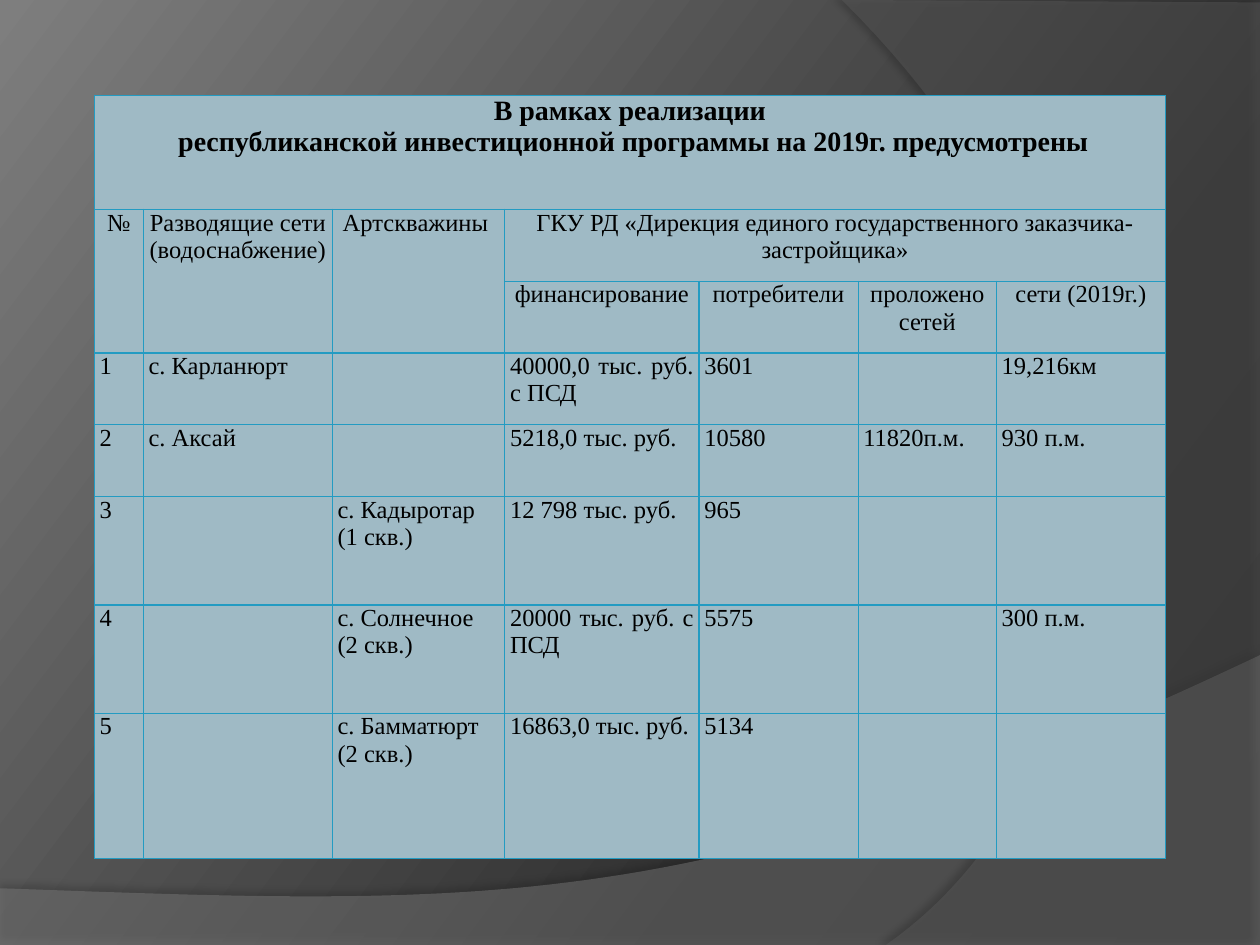
from dataclasses import dataclass

from lxml.etree import SubElement
from pptx import Presentation
from pptx.dml.color import RGBColor
from pptx.enum.text import PP_ALIGN as Align
from pptx.oxml import parse_xml
from pptx.oxml.ns import nsdecls, qn
from pptx.util import Pt

BLACK = RGBColor(0x00, 0x00, 0x00)
CELL = RGBColor(0x9F, 0xBA, 0xC5)
EDGE = RGBColor(0x23, 0x9B, 0xC2)
LOW = RGBColor(0x7F, 0x7F, 0x7F)
SIDE = RGBColor(0x5E, 0x5E, 0x5E)
STOPS = (
    (0, RGBColor(0x28, 0x28, 0x28)),
    (30, RGBColor(0x2F, 0x2F, 0x2F)),
    (100, RGBColor(0x7E, 0x7E, 0x7E)),
)
FONT = "Times New Roman"
Point = tuple[float, float]


@dataclass
class Wave:
    curve: tuple[Point, Point, Point, Point]
    corners: list[Point]
    color: RGBColor
    alpha: int
    shade: int
    gap: float
    angle: int


@dataclass
class Span:
    row: int
    col: int
    rows: int
    cols: int


WAVES = [
    Wave(((720, 374.4), (402.5, 524.9), (281.5, 517.7), (0, 507.6)),
         [(0, 540), (720, 540)], LOW, 45, 35, 3.5, 270),
    Wave(((506.2, 540), (641.5, 445.7), (681.8, 198), (481, 0)),
         [(720, 1.4), (720, 540)], SIDE, 40, 45, 4, 180),
]
COLS = [27.9, 108, 98.6, 111, 90.9, 79.1, 96.5]
ROWS = [64.9, 41.1, 41.1, 41.1, 41.1, 61.8, 61.8, 83]
SPANS = [Span(0, 0, 1, 7), Span(1, 3, 1, 4)] + [Span(1, col, 2, 1) for col in range(3)]
TEXT = [
    ["В рамках реализации\n республиканской инвестиционной программы на 2019г. предусмотрены"],
    ["№", "Разводящие сети (водоснабжение)", "Артскважины ",
     "ГКУ РД «Дирекция единого государственного заказчика-застройщика»"],
    ["", "", "", "финансирование", "потребители", "проложено сетей", "сети (2019г.)"],
    ["1", "с. Карланюрт", "", "40000,0 тыс. руб. с ПСД", "3601", "", "19,216км"],
    ["2", "с. Аксай", "", "5218,0 тыс. руб.", "10580", "11820п.м.", "930 п.м."],
    ["3", "", "с. Кадыротар\n(1 скв.)", "12 798 тыс. руб.", "965"],
    ["4", "", "с. Солнечное\n(2 скв.)", "20000 тыс. руб. с ПСД", "5575", "", "300 п.м."],
    ["5", "", "с. Бамматюрт\n(2 скв.)", "16863,0 тыс. руб.", "5134"],
]


def paint_back(slide) -> None:
    fill = slide.background.fill
    fill.gradient()
    fill.gradient_angle = 143
    stops = slide._element.find(".//" + qn("a:gsLst"))
    for stop in list(stops):
        stops.remove(stop)
    for place, color in STOPS:
        stop = SubElement(stops, qn("a:gs"), pos=str(place * 1000))
        SubElement(stop, qn("a:srgbClr"), val=str(color))


def trace(curve: tuple[Point, ...], steps: int = 60) -> list[Point]:
    points = []
    for step in range(steps + 1):
        t = step / steps
        u = 1 - t
        parts = (u ** 3, 3 * u * u * t, 3 * u * t * t, t ** 3)
        points.append(tuple(sum(k * p[axis] for k, p in zip(parts, curve)) for axis in (0, 1)))
    return points


def draw_wave(slide, wave: Wave) -> None:
    first, *rest = trace(wave.curve) + wave.corners
    pen = slide.shapes.build_freeform(round(first[0] * 100), round(first[1] * 100), scale=Pt(1) / 100)
    pen.add_line_segments([(round(x * 100), round(y * 100)) for x, y in rest], close=True)
    shape = pen.convert_to_shape()
    shape.fill.solid()
    shape.fill.fore_color.rgb = wave.color
    shape.line.fill.background()
    shape.shadow.inherit = False
    props = shape._element.spPr
    tint = props.find(qn("a:solidFill") + "/" + qn("a:srgbClr"))
    SubElement(tint, qn("a:alpha"), val=str(wave.alpha * 1000))
    shadow = SubElement(
        props.find(qn("a:effectLst")), qn("a:outerShdw"), blurRad=str(Pt(4)),
        dist=str(Pt(wave.gap)), dir=str(wave.angle * 60000), rotWithShape="0")
    dark = SubElement(shadow, qn("a:srgbClr"), val=str(BLACK))
    SubElement(dark, qn("a:alpha"), val=str(wave.shade * 1000))


def style_cell(cell) -> None:
    cell.margin_left = cell.margin_right = Pt(3)
    cell.margin_top = cell.margin_bottom = Pt(0)
    props = cell._tc.get_or_add_tcPr()
    for side in "LRTB":
        props.append(parse_xml(
            f'<a:ln{side} {nsdecls("a")} w="{Pt(0.75)}"><a:solidFill>'
            f'<a:srgbClr val="{EDGE}"/></a:solidFill></a:ln{side}>'))
    cell.fill.solid()
    cell.fill.fore_color.rgb = CELL


def write_cell(cell, text: str, row: int) -> None:
    cell.text = text
    for para in cell.text_frame.paragraphs:
        para.alignment = Align.CENTER if row < 3 else Align.JUSTIFY
        para.font.name = FONT
        para.font.size = Pt(14 if row else 16)
        para.font.bold = row == 0
        para.font.color.rgb = BLACK


def draw_table(slide) -> None:
    frame = slide.shapes.add_table(
        len(ROWS), len(COLS), Pt(54), Pt(54.7), Pt(sum(COLS)), Pt(sum(ROWS)))
    table = frame.table
    table.first_row = table.horz_banding = False
    for col, width in zip(table.columns, COLS):
        col.width = Pt(width)
    for row, height in zip(table.rows, ROWS):
        row.height = Pt(height)
    for cell in table.iter_cells():
        style_cell(cell)
    for span in SPANS:
        end = table.cell(span.row + span.rows - 1, span.col + span.cols - 1)
        table.cell(span.row, span.col).merge(end)
    for row, words in enumerate(TEXT):
        for col, text in enumerate(words):
            if text:
                write_cell(table.cell(row, col), text, row)


def main() -> None:
    deck = Presentation()
    deck.slide_width, deck.slide_height = Pt(720), Pt(540)
    slide = deck.slides.add_slide(deck.slide_layouts[6])
    paint_back(slide)
    for wave in WAVES:
        draw_wave(slide, wave)
    draw_table(slide)
    deck.save("out.pptx")


if __name__ == "__main__":
    main()
